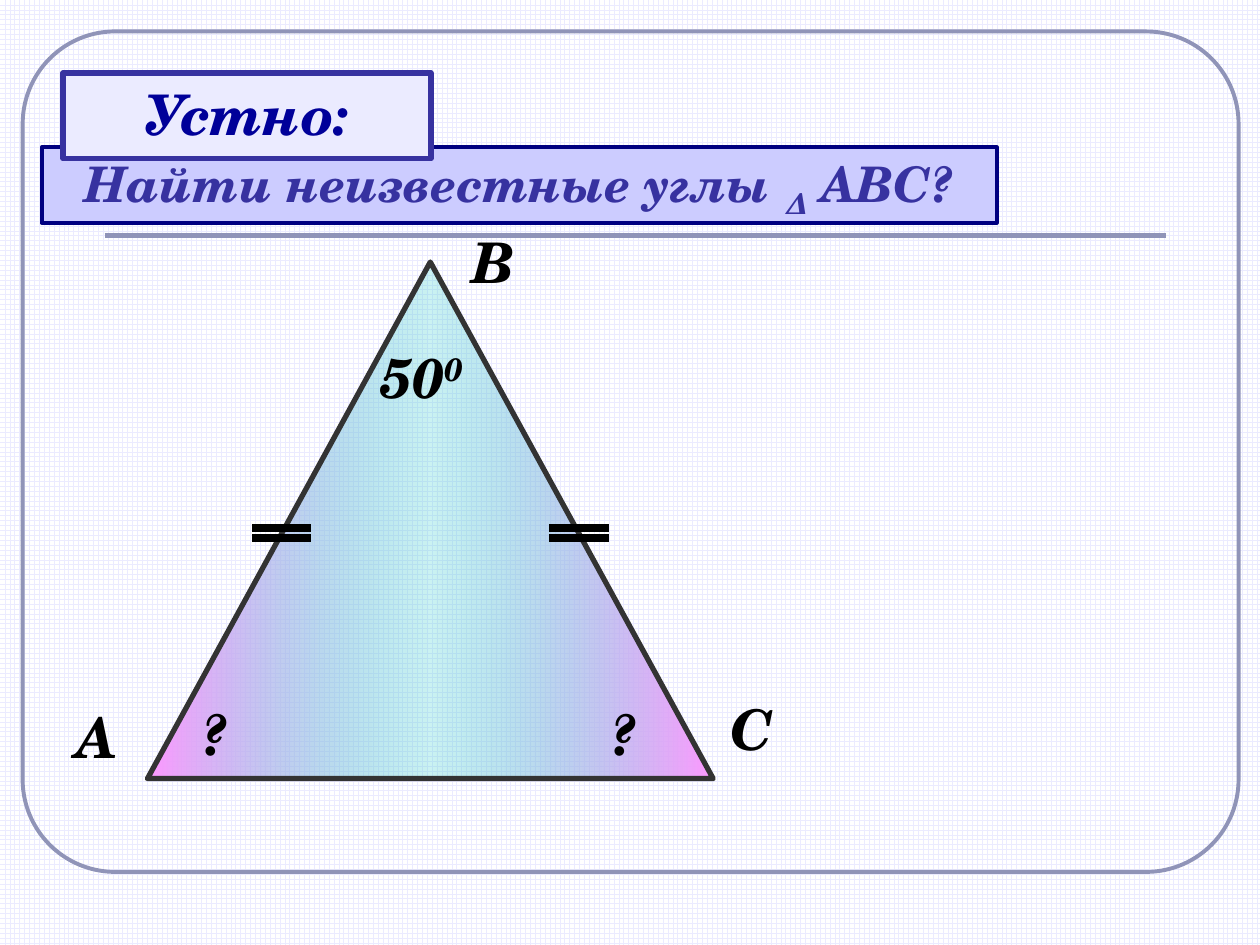
from copy import deepcopy

from pptx import Presentation
from pptx.dml.color import RGBColor
from pptx.enum.dml import MSO_PATTERN
from pptx.enum.shapes import MSO_CONNECTOR, MSO_SHAPE
from pptx.enum.text import MSO_ANCHOR, MSO_AUTO_SIZE, PP_ALIGN
from pptx.oxml.ns import qn
from pptx.util import Inches, Pt
from lxml.etree import SubElement

FONT = "TeX Gyre Schola"
BLACK = RGBColor(0x00, 0x00, 0x00)
WHITE = RGBColor(0xFF, 0xFF, 0xFF)
PALE = RGBColor(0xEB, 0xEB, 0xFF)
LAVENDER = RGBColor(0xCC, 0xCC, 0xFF)
FRAME = RGBColor(0x90, 0x94, 0xB8)
INDIGO = RGBColor(0x37, 0x32, 0xA0)
NAVY = RGBColor(0x00, 0x00, 0x80)
BLUE = RGBColor(0x00, 0x00, 0x99)
CHARCOAL = RGBColor(0x33, 0x33, 0x33)
PINK = RGBColor(0xFF, 0x99, 0xFF)
TEAL = RGBColor(0x33, 0xCC, 0xCC)


def set_background(page):
    fill = page.background.fill
    fill.patterned()
    fill.pattern = MSO_PATTERN.LARGE_GRID
    fill.fore_color.rgb = PALE
    fill.back_color.rgb = WHITE


def add_outlined(page, kind, left, top, width, height, color, weight):
    shape = page.shapes.add_shape(
        kind, Inches(left), Inches(top), Inches(width), Inches(height))
    shape.shadow.inherit = False
    shape.fill.background()
    shape.line.color.rgb = color
    shape.line.width = Pt(weight)
    return shape


def add_rule(page, left, right, y, color, weight):
    line = page.shapes.add_connector(
        MSO_CONNECTOR.STRAIGHT, Inches(left), Inches(y), Inches(right), Inches(y))
    line.line.color.rgb = color
    line.line.width = Pt(weight)
    SubElement(line._element.spPr, qn("a:effectLst"))


def write(box, spans, size, color, align=PP_ALIGN.LEFT, wrap=True):
    """Fill a box with one paragraph of (text, baseline percent) spans."""
    frame = box.text_frame
    frame.word_wrap = wrap
    frame.auto_size = MSO_AUTO_SIZE.SHAPE_TO_FIT_TEXT
    frame.vertical_anchor = MSO_ANCHOR.TOP
    para = frame.paragraphs[0]
    para.alignment = align
    font = para.font
    font.name, font.size, font.bold, font.italic = FONT, Pt(size), True, True
    font.color.rgb = color
    for text, baseline in spans:
        span = para.add_run()
        span.text = text
        if baseline:
            span._r.get_or_add_rPr().set("baseline", str(baseline * 1000))


def add_label(page, left, top, width, spans, wrap=True):
    box = page.shapes.add_textbox(
        Inches(left), Inches(top), Inches(width), Inches(0.63))
    write(box, spans, 32, BLACK, wrap=wrap)


def add_banner(page, left, top, width, height, fill, line, weight, spans, size, color):
    banner = add_outlined(
        page, MSO_SHAPE.RECTANGLE, left, top, width, height, line, weight)
    banner.fill.solid()
    banner.fill.fore_color.rgb = fill
    write(banner, spans, size, color, PP_ALIGN.CENTER)


def add_triangle(page):
    triangle = add_outlined(
        page, MSO_SHAPE.ISOSCELES_TRIANGLE, 1.17, 2.08, 4.49, 4.1, CHARCOAL, 3)
    fill = triangle.fill
    fill.gradient()
    fill.gradient_angle = 0
    for stop, position in zip(fill.gradient_stops, (0, 1)):
        stop.color.rgb = PINK
        stop.position = position
    # Translucent middle stop
    first = triangle._element.spPr.find(".//" + qn("a:gs"))
    first.addnext(deepcopy(first))
    middle = fill.gradient_stops[1]
    middle.position = 0.5
    middle.color.rgb = TEAL
    color = first.getnext().find(qn("a:srgbClr"))
    SubElement(color, qn("a:alpha")).set("val", "25000")


def main():
    deck = Presentation()
    deck.slide_width, deck.slide_height = Inches(10), Inches(7.5)
    page = deck.slides.add_slide(deck.slide_layouts[6])
    set_background(page)

    # Frame and rule under the heading
    frame = add_outlined(
        page, MSO_SHAPE.ROUNDED_RECTANGLE, 0.18, 0.25, 9.65, 6.67, FRAME, 2.25)
    frame.adjustments[0] = 0.11
    add_rule(page, 0.83, 9.25, 1.87, FRAME, 3)

    # Triangle with equal-side marks
    add_triangle(page)
    for left in (2, 4.36):
        for y in (4.19, 4.27):
            add_rule(page, left, left + 0.47, y, BLACK, 4.5)

    # Vertices and angles
    for name, left, top, width in (
            ("А", 0.5, 5.53, 0.54), ("В", 3.65, 1.76, 0.54), ("С", 5.7, 5.46, 0.52)):
        add_label(page, left, top, width, [(name, 0)], wrap=False)
    add_label(page, 2.92, 2.67, 1.06, [("50", 0), ("0", 30)])
    for left in (1.5, 4.75):
        add_label(page, left, 5.5, 0.47, [("?", 0)])

    # Headings
    task = [("Найти неизвестные углы ", 0), ("Δ", -25), (" АВС?", 0)]
    add_banner(page, 0.33, 1.17, 7.58, 0.6, LAVENDER, NAVY, 2.25, task, 28, INDIGO)
    add_banner(page, 0.5, 0.58, 2.92, 0.68, PALE, INDIGO, 3, [("Устно:", 0)], 32, BLUE)

    deck.save("out.pptx")


if __name__ == "__main__":
    main()
